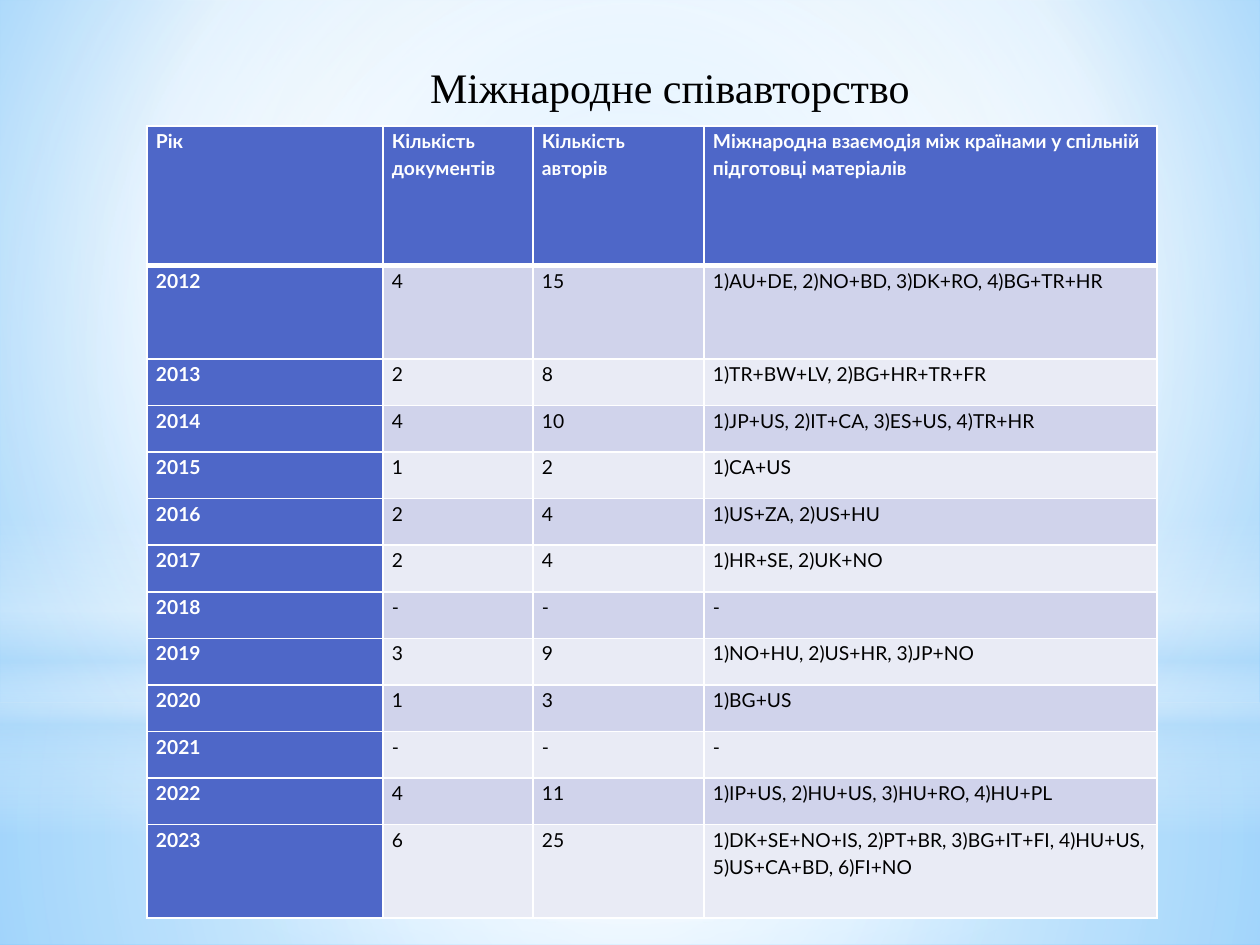
"""Build a slide with a table of international co-authorship by year."""
from dataclasses import dataclass

from lxml import etree
from pptx import Presentation
from pptx import util as u
from pptx.dml.color import RGBColor
from pptx.enum import shapes, text
from pptx.oxml import ns

PX = 914400 / 126


@dataclass(frozen=True)
class Theme:
    """Colours, fonts and type sizes of the slide."""

    white: str = "FFFFFF"
    black: str = "000000"
    head: str = "4E67C8"
    bands: tuple = ("D0D3EB", "E9EBF5")
    sky: str = "B4DCFA"
    pale: str = "9ED5FF"
    deep: str = "5BB9FF"
    serif: str = "Times New Roman"
    sans: str = "Lato"
    title: int = 24
    body: int = 11


THEME = Theme()
MID = (50, 50, 50, 50)

BACK = [(0, THEME.pale, 100), (60, THEME.white, 100), (100, THEME.deep, 100)]
GLOWS = [
    ("RECTANGLE", (0, 703, 1260, 242), MID,
     [(0, THEME.white, 91), (37, THEME.white, 76), (100, THEME.sky, 79)]),
    ("RECTANGLE", (0, 0, 1260, 703), MID,
     [(0, THEME.white, 89), (48, THEME.white, 62), (100, THEME.sky, 79)]),
    ("RECTANGLE", (0, 519, 1260, 315), None,
     [(0, THEME.white, 0), (29, THEME.white, 30), (45, THEME.sky, 40),
      (55, THEME.white, 26), (65, THEME.sky, 60), (100, THEME.white, 0)]),
    ("OVAL", (0, 220, 1260, 703), MID,
     [(0, THEME.white, 100), (56, THEME.white, 0)]),
]

ROWS = [
    ("Рік", "Кількість документів", "Кількість\nавторів",
     "Міжнародна взаємодія між країнами у спільній підготовці матеріалів"),
    ("2012", "4", "15", "1)AU+DE, 2)NO+BD, 3)DK+RO, 4)BG+TR+HR"),
    ("2013", "2", "8", "1)TR+BW+LV, 2)BG+HR+TR+FR"),
    ("2014", "4", "10", "1)JP+US, 2)IT+CA, 3)ES+US, 4)TR+HR"),
    ("2015", "1", "2", "1)CA+US"),
    ("2016", "2", "4", "1)US+ZA, 2)US+HU"),
    ("2017", "2", "4", "1)HR+SE, 2)UK+NO"),
    ("2018", "-", "-", "-"),
    ("2019", "3", "9", "1)NO+HU, 2)US+HR, 3)JP+NO"),
    ("2020", "1", "3", "1)BG+US"),
    ("2021", "-", "-", "-"),
    ("2022", "4", "11", "1)IP+US, 2)HU+US, 3)HU+RO, 4)HU+PL"),
    ("2023", "6", "25",
     "1)DK+SE+NO+IS, 2)PT+BR, 3)BG+IT+FI, 4)HU+US, 5)US+CA+BD, 6)FI+NO"),
]
COLS = (236, 150, 171, 453)
SPANS = (3, 2) + (1,) * 10 + (2,)


def px(n):
    """Turn px into EMU."""
    return u.Emu(round(n * PX))


def put(obj, vals):
    """Set each named value on an object."""
    for name, val in vals.items():
        setattr(obj, name, val)


def sub(node, tag, **attrs):
    """Add a child in the drawing namespace."""
    return etree.SubElement(node, ns.qn(f"a:{tag}"), {k: str(v) for k, v in attrs.items()})


class Deck:
    """Hold the theme and the current slide."""

    def __init__(self, theme):
        """Start a deck with one title-only slide."""
        self.theme = theme
        self.prs = Presentation()
        put(self.prs, {"slide_width": px(1260), "slide_height": px(945)})
        self.slide = self.prs.slides.add_slide(self.prs.slide_layouts[5])

    def blend(self, owner, stops, focus):
        """Fill the owner's gradient with stops, round a focus or downwards."""
        grad = owner.element.find(f".//{ns.qn('a:gradFill')}")
        for child in list(grad):
            grad.remove(child)
        group = sub(grad, "gsLst")
        for pos, tint, alpha in stops:
            stop = sub(group, "gs", pos=pos * 1000)
            sub(sub(stop, "srgbClr", val=tint), "alpha", val=alpha * 1000)
        if focus:
            way = sub(grad, "path", path="circle")
            sub(way, "fillToRect", **{k: v * 1000 for k, v in zip("ltrb", focus)})
        else:
            sub(grad, "lin", ang=90 * 60000, scaled=0)

    def back(self, stops, focus):
        """Paint the slide background."""
        self.slide.background.fill.gradient()
        self.blend(self.slide, stops, focus)

    def glow(self, kind, box, focus, stops):
        """Add a soft gradient shape."""
        shape = self.slide.shapes.add_shape(
            getattr(shapes.MSO_SHAPE, kind), *map(px, box))
        shape.shadow.inherit = False
        shape.line.fill.background()
        shape.fill.gradient()
        self.blend(shape, stops, focus)

    def style(self, para, face, size, tint, bold=False):
        """Set the type of one paragraph."""
        for run in para.runs:
            put(run.font, {"name": face, "size": u.Pt(size), "bold": bold})
            run.font.color.rgb = RGBColor.from_string(tint)

    def title(self, words, box):
        """Place and format the title in front of the backdrop."""
        shape = self.slide.shapes.title
        put(shape, dict(zip(("left", "top", "width", "height"), map(px, box))))
        frame = shape.text_frame
        put(frame, {"text": words, "word_wrap": True,
                    "auto_size": text.MSO_AUTO_SIZE.NONE,
                    "vertical_anchor": text.MSO_ANCHOR.TOP})
        para = frame.paragraphs[0]
        para.alignment = text.PP_ALIGN.CENTER
        self.style(para, self.theme.serif, self.theme.title, self.theme.black)
        self.slide.shapes.element.append(shape.element)

    def edge(self, cell, row):
        """Draw the cell borders, thick under the header."""
        props = cell._tc.get_or_add_tcPr()
        thick = {("B", 0), ("T", 1)}
        for i, side in enumerate("LRTB"):
            wide = u.Pt(3 if (side, row) in thick else 1)
            line = sub(props, f"ln{side}", w=int(wide))
            sub(sub(line, "solidFill"), "srgbClr", val=self.theme.white)
            props.insert(i, line)

    def cell(self, cell, words, row, col):
        """Fill and format one table cell."""
        look = self.theme
        main = row == 0 or col == 0
        put(cell, {"text": words, "margin_left": px(9), "margin_right": px(9),
                   "margin_top": 0, "margin_bottom": 0})
        cell.fill.solid()
        cell.fill.fore_color.rgb = RGBColor.from_string(
            look.head if main else look.bands[(row - 1) % 2])
        for para in cell.text_frame.paragraphs:
            para.line_spacing = 1.15
            self.style(para, look.sans, look.body,
                       look.white if main else look.black, main)
        self.edge(cell, row)

    def table(self, rows, box, cols, spans):
        """Add a table whose row heights share the box by span."""
        grid = self.slide.shapes.add_table(
            len(rows), len(cols), *map(px, box)).table
        for col, wide in zip(grid.columns, cols):
            col.width = px(wide)
        for row, span in zip(grid.rows, spans):
            row.height = px(box[3] * span / sum(spans))
        for r, row in enumerate(rows):
            for c, words in enumerate(row):
                self.cell(grid.cell(r, c), words, r, c)


def main():
    """Build and save the slide."""
    deck = Deck(THEME)
    deck.back(BACK, (20, 10, 20, 60))
    for glow in GLOWS:
        deck.glow(*glow)
    deck.table(ROWS, (147, 126, sum(COLS), 792), COLS, SPANS)
    deck.title("Міжнародне співавторство", (323, 55, 694, 63))
    deck.prs.save("out.pptx")


if __name__ == "__main__":
    main()
